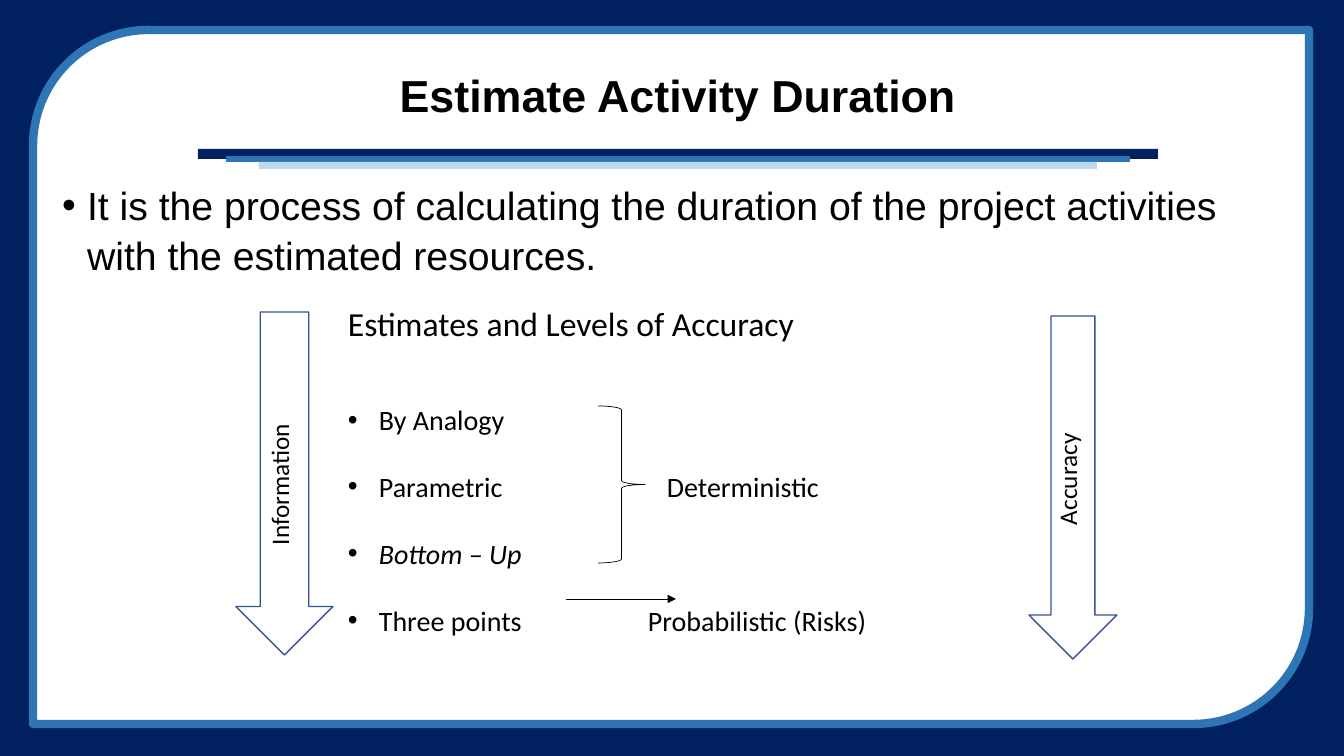
from lxml import etree
from pptx import Presentation
from pptx.dml.color import RGBColor
from pptx.enum.shapes import MSO_CONNECTOR, MSO_SHAPE as SHAPE
from pptx.enum.text import MSO_ANCHOR, MSO_AUTO_SIZE, PP_ALIGN
from pptx.oxml.ns import qn
from pptx.util import Pt

EMU_PER_PX = 914400 / 100.8
COLORS = {"navy": "002060", "blue": "2E75B6", "pale": "BDD7EE",
          "arrow": "325491", "white": "FFFFFF", "black": "000000"}


def px(n):
    return round(n * EMU_PER_PX)


def rgb(name):
    return RGBColor.from_string(COLORS[name])


def write(p, text, size, font="Calibri", bold=False, italic=False, before=0,
          spacing=None, align=PP_ALIGN.LEFT, indent=0, tab=None):
    p.alignment = align
    if before:
        p.space_before = Pt(before)
    if spacing:
        p.line_spacing = spacing
    pPr = p._p.get_or_add_pPr()
    if indent:
        pPr.set("marL", str(px(indent)))
        pPr.set("indent", str(-px(indent)))
        etree.SubElement(pPr, qn("a:buFont")).set("typeface", "Arial")
        etree.SubElement(pPr, qn("a:buChar")).set("char", "•")
    if tab:
        tabs = etree.SubElement(pPr, qn("a:tabLst"))
        etree.SubElement(tabs, qn("a:tab"), pos=str(px(tab)), algn="l")
    r = p.add_run()
    r.text = text
    r.font.size = Pt(size)
    r.font.name = font
    r.font.bold = bold
    r.font.italic = italic
    r.font.color.rgb = rgb("black")


class SlideBuilder:
    def __init__(self, prs):
        self.s = prs.slides.add_slide(prs.slide_layouts[1])
        fill = self.s.background.fill
        fill.solid()
        fill.fore_color.rgb = rgb("navy")

    def shape(self, kind, x, y, w, h, fill=None, line=None, weight=1):
        sp = self.s.shapes.add_shape(kind, px(x), px(y), px(w), px(h))
        sp.shadow.inherit = False
        if fill:
            sp.fill.solid()
            sp.fill.fore_color.rgb = rgb(fill)
        else:
            sp.fill.background()
        if line:
            sp.line.color.rgb = rgb(line)
            sp.line.width = Pt(weight)
        else:
            sp.line.fill.background()
        return sp

    def placeholder(self, idx, x, y, w, h, text, anchor, **style):
        sp = self.s.placeholders[idx]
        self.s.shapes._spTree.append(sp._element)
        sp.left, sp.top, sp.width, sp.height = px(x), px(y), px(w), px(h)
        tf = sp.text_frame
        tf.auto_size = MSO_AUTO_SIZE.NONE
        tf.vertical_anchor = anchor
        write(tf.paragraphs[0], text, font="Arial", **style)

    def text(self, x, y, w, h, vertical=False):
        tf = self.s.shapes.add_textbox(px(x), px(y), px(w), px(h)).text_frame
        tf.word_wrap = True
        if vertical:
            tf._txBody.bodyPr.set("vert", "vert270")
        return tf

    def arrow(self, x1, y1, x2, y2):
        c = self.s.shapes.add_connector(
            MSO_CONNECTOR.STRAIGHT, px(x1), px(y1), px(x2), px(y2))
        c.line.color.rgb = rgb("black")
        c.line.width = Pt(0.5)
        etree.SubElement(c.line._get_or_add_ln(), qn("a:tailEnd")).set("type", "triangle")
        etree.SubElement(c._element.spPr, qn("a:effectLst"))


def main():
    prs = Presentation()
    prs.slide_width, prs.slide_height = px(1344), px(756)
    b = SlideBuilder(prs)

    b.shape(SHAPE.ROUND_2_DIAG_RECTANGLE, 33, 30, 1276, 694, "white", "blue", 6)
    for x, y, w, h, color in ((198, 149, 960, 10, "navy"),
                              (226, 156, 904, 6, "blue"),
                              (259, 162, 838, 7, "pale")):
        b.shape(SHAPE.RECTANGLE, x, y, w, h, color)

    b.placeholder(0, 198, 49, 960, 98, "Estimate Activity Duration",
                  MSO_ANCHOR.MIDDLE, size=32, bold=True, spacing=0.9,
                  align=PP_ALIGN.CENTER)
    b.placeholder(1, 52, 173, 1238, 532,
                  "It is the process of calculating the duration of the "
                  "project activities with the estimated resources.",
                  MSO_ANCHOR.TOP, size=28, spacing=1.07, indent=25)

    tf = b.text(338, 298, 684, 350)
    write(tf.paragraphs[0], "Estimates and Levels of Accuracy", 24)
    for text, before, tab, italic in (
            ("By Analogy", 42.5, None, False),
            ("Parametric\tDeterministic", 23.7, 319, False),
            ("Bottom – Up", 23.7, None, True),
            ("Three points\tProbabilistic (Risks)", 23.7, 300, False)):
        write(tf.add_paragraph(), text, 20, before=before, tab=tab,
              italic=italic, indent=31)

    b.shape(SHAPE.RIGHT_BRACE, 598, 406, 47, 157, line="black", weight=0.5)
    b.arrow(566, 599, 676, 599)

    for label, x, y, w, text_x, text_y in (
            ("Information", 236, 312, 97, 259, 393),
            ("Accuracy", 1029, 316, 88, 1047, 373)):
        b.shape(SHAPE.DOWN_ARROW, x, y, w, 343, line="arrow")
        write(b.text(text_x, text_y, 50, 162, vertical=True).paragraphs[0], label, 18)

    prs.save("out.pptx")


if __name__ == "__main__":
    main()
